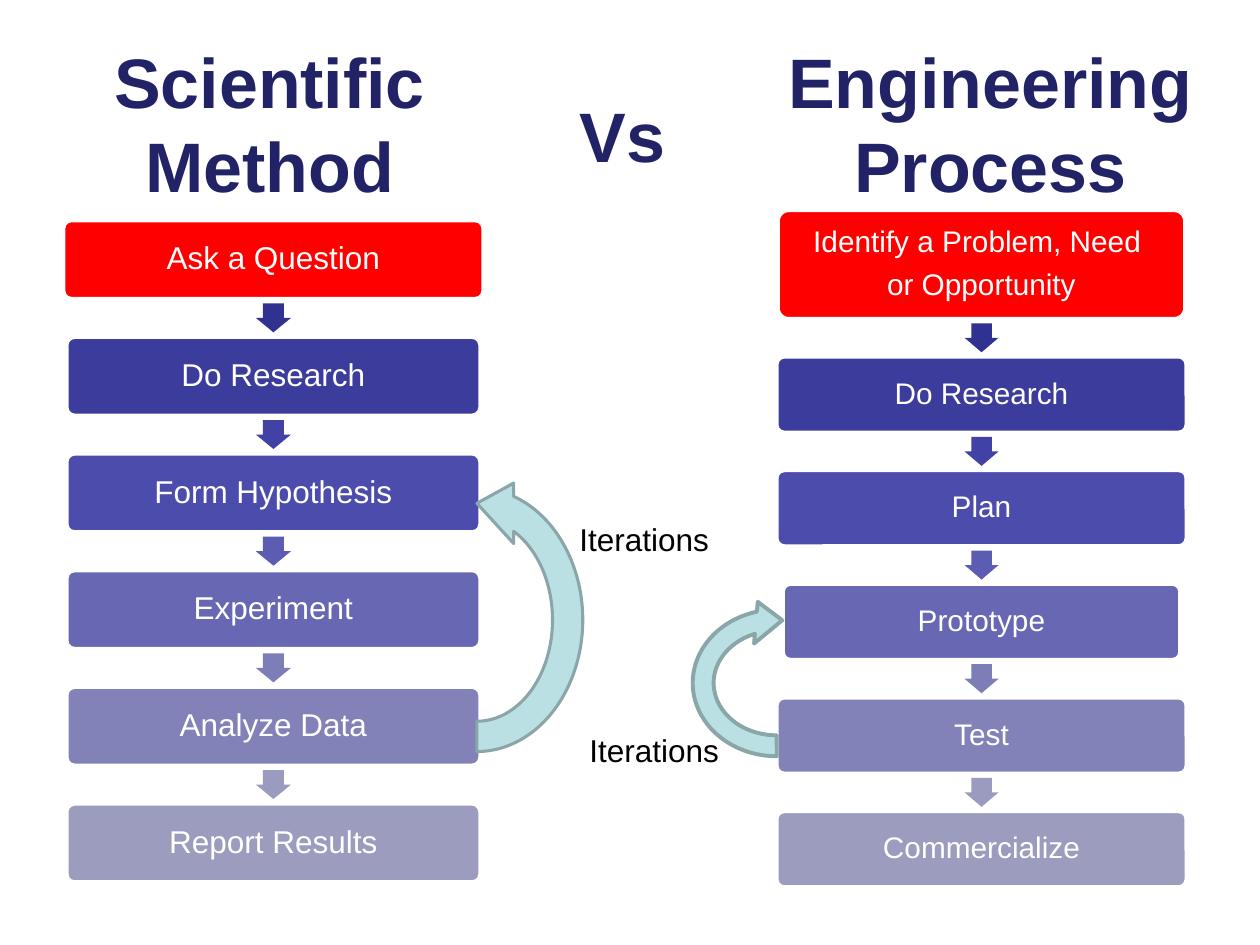
from pptx import Presentation
from pptx.dml.color import RGBColor
from pptx.enum.shapes import MSO_SHAPE
from pptx.enum.text import MSO_ANCHOR, MSO_AUTO_SIZE, PP_ALIGN
from pptx.util import Inches, Pt

FONT = "Arial"
WHITE = RGBColor(0xFF, 0xFF, 0xFF)
BLACK = RGBColor(0x00, 0x00, 0x00)
NAVY = RGBColor(0x22, 0x22, 0x67)
LOOP_FILL = RGBColor(0xBB, 0xE0, 0xE3)
LOOP_LINE = RGBColor(0x8A, 0xA6, 0xA8)
STEP_COLORS = [RGBColor.from_string(c) for c in
               ("FF0000", "3C3C9D", "4C4CAD", "6767B3", "8282B8", "9C9CBF")]
ARROW_COLORS = [RGBColor.from_string(c) for c in
                ("313192", "4242A6", "5C5CB3", "7D7DB8", "9B9BBF")]

# Each step: text, width and height in inches
SCIENCE_STEPS = [("Ask a Question", 3.33, 0.62)] + [
    (step, 3.28, 0.62) for step in
    ("Do Research", "Form Hypothesis", "Experiment", "Analyze Data", "Report Results")]
ENGINEERING_STEPS = [
    ("Identify a Problem, Need \nor Opportunity", 3.23, 0.86),
    ("Do Research", 3.25, 0.6),
    ("Plan", 3.25, 0.6),
    ("Prototype", 3.15, 0.6),
    ("Test", 3.25, 0.6),
    ("Commercialize", 3.25, 0.6),
]


def format_text(frame, size, color, bold=False, align=PP_ALIGN.CENTER):
    for paragraph in frame.paragraphs:
        paragraph.alignment = align
        for run in paragraph.runs:
            run.font.name = FONT
            run.font.size = Pt(size)
            run.font.bold = bold
            run.font.color.rgb = color


def set_heading(heading, text, left, top):
    heading.left, heading.top = Inches(left), Inches(top)
    heading.width, heading.height = Inches(3.38), Inches(1.25)
    frame = heading.text_frame
    frame.text = text
    frame.word_wrap = True
    frame.auto_size = MSO_AUTO_SIZE.NONE
    frame.vertical_anchor = MSO_ANCHOR.MIDDLE
    frame.margin_left = frame.margin_right = frame.margin_bottom = 0
    frame.margin_top = Inches(0.04)
    format_text(frame, 40, NAVY, bold=True)


def add_step(slide, text, left, top, width, height, color, size):
    step = slide.shapes.add_shape(MSO_SHAPE.ROUNDED_RECTANGLE, Inches(left),
                                  Inches(top), Inches(width), Inches(height))
    step.adjustments[0] = 0.1
    step.shadow.inherit = False
    step.fill.solid()
    step.fill.fore_color.rgb = color
    step.line.color.rgb = WHITE
    step.line.width = Pt(2)
    frame = step.text_frame
    frame.text = text
    frame.word_wrap = True
    frame.vertical_anchor = MSO_ANCHOR.MIDDLE
    frame.margin_left = frame.margin_right = Inches(0.07)
    frame.margin_top = frame.margin_bottom = Inches(0.07)
    format_text(frame, size, WHITE)
    for paragraph in frame.paragraphs:
        paragraph.line_spacing = 0.9
        paragraph.space_after = Pt(6)


def add_step_arrow(slide, center_x, center_y, length, breadth, color):
    arrow = slide.shapes.add_shape(
        MSO_SHAPE.RIGHT_ARROW, Inches(center_x - length / 2),
        Inches(center_y - breadth / 2), Inches(length), Inches(breadth))
    arrow.rotation = 90
    arrow.adjustments[0] = 0.6
    arrow.shadow.inherit = False
    arrow.fill.solid()
    arrow.fill.fore_color.rgb = color
    arrow.line.fill.background()


def add_flow(slide, steps, center_x, top, height, size, arrow_breadth):
    """Stack the steps evenly over the height, with an arrow in each gap."""
    gap = (height - sum(step[2] for step in steps)) / (len(steps) - 1)
    for index, (text, step_width, step_height) in enumerate(steps):
        add_step(slide, text, center_x - step_width / 2, top, step_width,
                 step_height, STEP_COLORS[index], size)
        top += step_height
        if index < len(ARROW_COLORS):
            add_step_arrow(slide, center_x, top + gap / 2, 0.23, arrow_breadth,
                           ARROW_COLORS[index])
        top += gap


def add_loop(slide, left, top, width, height, line_width, flipped=False):
    loop = slide.shapes.add_shape(MSO_SHAPE.CIRCULAR_ARROW, Inches(left),
                                  Inches(top), Inches(width), Inches(height))
    loop.rotation = 270
    loop.shadow.inherit = False
    loop.fill.solid()
    loop.fill.fore_color.rgb = LOOP_FILL
    loop.line.color.rgb = LOOP_LINE
    loop.line.width = Pt(line_width)
    if flipped:
        loop._element.spPr.get_or_add_xfrm().set("flipV", "1")
    return loop


def add_loop_label(slide, left, top):
    label = slide.shapes.add_textbox(Inches(left), Inches(top),
                                     Inches(1.24), Inches(0.4))
    frame = label.text_frame
    frame.text = "Iterations"
    frame.word_wrap = False
    frame.auto_size = MSO_AUTO_SIZE.SHAPE_TO_FIT_TEXT
    format_text(frame, 18, BLACK, align=PP_ALIGN.LEFT)


def add_headings(slide):
    set_heading(slide.shapes.title, "Scientific\nMethod", 0.45, 0.33)
    for text, left, top in (("Engineering Process", 6.17, 0.33), ("Vs", 3.25, 0.42)):
        set_heading(slide.shapes.add_textbox(0, 0, 0, 0), text, left, top)


def add_iterations(slide):
    prototype_loop = add_loop(slide, 5.5, 4.67, 1.33, 1.5, 2.25)
    prototype_loop.adjustments[1] = 14.467
    add_loop(slide, 2.62, 3.96, 2.33, 1.92, 1.75, flipped=True)
    add_loop_label(slide, 4.5, 4.08)
    add_loop_label(slide, 4.58, 5.75)


def main():
    deck = Presentation()
    deck.slide_width, deck.slide_height = Inches(10), Inches(7.5)
    slide = deck.slides.add_slide(deck.slide_layouts.get_by_name("Title Only"))
    add_flow(slide, ENGINEERING_STEPS, 7.79, 1.67, 5.37, 17, 0.27)
    add_flow(slide, SCIENCE_STEPS, 2.17, 1.75, 5.25, 18, 0.28)
    add_iterations(slide)
    add_headings(slide)
    deck.save("out.pptx")


if __name__ == "__main__":
    main()
